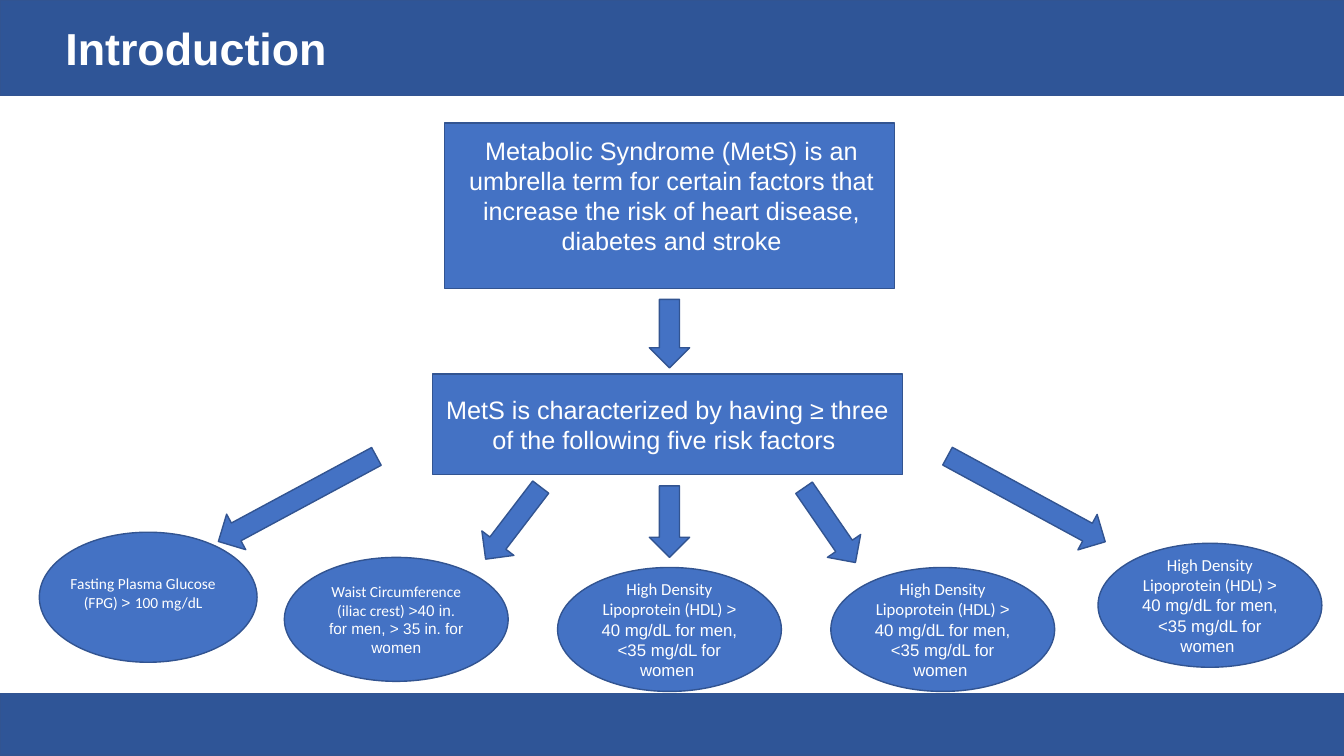
from pptx import Presentation
from pptx import util as u
from pptx.dml.color import RGBColor
from pptx.enum import shapes, text

BAND_BLUE = RGBColor(0x2F, 0x55, 0x97)
SHAPE_BLUE = RGBColor(0x44, 0x72, 0xC4)
OUTLINE_BLUE = RGBColor(0x32, 0x54, 0x91)
WHITE = RGBColor(0xFF, 0xFF, 0xFF)
SLIDE_WIDTH, SLIDE_HEIGHT = 13.33, 7.5

RECTANGLE = shapes.MSO_SHAPE.RECTANGLE
ELLIPSE = shapes.MSO_SHAPE.OVAL
DOWN_ARROW = shapes.MSO_SHAPE.DOWN_ARROW

HDL_RUNS = [("High Density Lipoprotein (HDL) ", "Calibri"),
            ("> 40 mg/dL for men, <35 mg/dL for women ", "Arial")]
WAIST_RUNS = [("Waist Circumference (iliac crest) ", "Calibri"),
              (">40 in. for men, > 35 in. for women", "Arial")]
GLUCOSE_RUNS = [("Fasting Plasma Glucose (FPG) ", "Calibri"),
                ("> ", "Arial"), ("100 mg/dL", "Calibri")]


def add_box(slide, kind, box, fill=SHAPE_BLUE, rotation=0):
    shape = slide.shapes.add_shape(kind, *map(u.Inches, box))
    shape.shadow.inherit = False
    shape.fill.solid()
    shape.fill.fore_color.rgb = fill
    shape.line.color.rgb = OUTLINE_BLUE
    shape.line.width = u.Pt(1)
    shape.rotation = rotation
    return shape


def write(shape, runs, size, anchor=text.MSO_ANCHOR.MIDDLE,
          align=text.PP_ALIGN.CENTER, bold=False):
    frame = shape.text_frame
    frame.word_wrap = True
    frame.vertical_anchor = anchor
    paragraph = frame.paragraphs[0]
    paragraph.alignment = align
    for words, font_name in runs:
        run = paragraph.add_run()
        run.text = words
        run.font.name = font_name
        run.font.size = u.Pt(size)
        run.font.bold = bold
        run.font.color.rgb = WHITE


def add_label(slide, box, runs, size, **options):
    label = slide.shapes.add_textbox(*map(u.Inches, box))
    write(label, runs, size, anchor=text.MSO_ANCHOR.TOP, **options)


def add_title_band(slide, left, top, width, height):
    add_box(slide, RECTANGLE, (left, top, width, height), BAND_BLUE)
    add_label(slide, (left + 0.55, top + 0.16, width - 0.75, 0.64),
              [("Introduction", "Arial")], 32,
              align=text.PP_ALIGN.LEFT, bold=True)


def add_footer_band(slide, left, top, width, height):
    add_box(slide, RECTANGLE, (left, top, width, height), BAND_BLUE)


def add_definition(slide, left, top, width, height):
    add_box(slide, RECTANGLE, (left, top, width, height))
    add_label(slide, (left + 0.11, top + 0.07, width - 0.18, 1.31),
              [("Metabolic Syndrome (MetS) is an umbrella term for certain "
                "factors that increase the risk of heart disease, diabetes "
                "and stroke", "Arial")], 18)


def add_criterion(slide, left, top, width, height):
    criterion = add_box(slide, RECTANGLE, (left, top, width, height))
    write(criterion, [("MetS is characterized by having ≥ three of the "
                       "following five risk factors ", "Arial")], 18)


def add_arrows(slide, left, top):
    # Offset from the corner, length and rotation of each arrow
    for dx, dy, length, rotation in [(3.69, 0, 0.68, 0),
                                     (0, 1.09, 1.78, 61.7),
                                     (2.14, 1.77, 0.9, 37.4),
                                     (3.69, 1.85, 0.71, 0),
                                     (5.28, 1.79, 0.9, 325.5),
                                     (7.23, 1.09, 1.78, 298.5)]:
        add_box(slide, DOWN_ARROW, (left + dx, top + dy, 0.4, length),
                rotation=rotation)


def add_risk_factors(slide, left, top):
    # Glucose has a separate label, set above the ellipse's middle
    add_box(slide, ELLIPSE, (left, top, 2.16, 1.29))
    add_label(slide, (left + 0.2, top + 0.37, 1.66, 0.47), GLUCOSE_RUNS, 11)

    # The other four carry their own text
    for dx, dy, runs, size in [(2.43, 0.25, WAIST_RUNS, 11),
                               (5.14, 0.35, HDL_RUNS, 12),
                               (7.85, 0.35, HDL_RUNS, 12),
                               (10.5, 0.11, HDL_RUNS, 12)]:
        factor = add_box(slide, ELLIPSE, (left + dx, top + dy, 2.22, 1.23))
        write(factor, runs, size)


def main():
    presentation = Presentation()
    presentation.slide_width = u.Inches(SLIDE_WIDTH)
    presentation.slide_height = u.Inches(SLIDE_HEIGHT)
    slide = presentation.slides.add_slide(presentation.slide_layouts[6])

    add_title_band(slide, 0, 0, SLIDE_WIDTH, 0.95)
    add_footer_band(slide, 0, 6.88, SLIDE_WIDTH, 0.61)
    add_definition(slide, 4.41, 1.22, 4.46, 1.64)
    add_criterion(slide, 4.29, 3.71, 4.66, 1)
    add_risk_factors(slide, 0.39, 5.28)
    add_arrows(slide, 2.75, 2.97)

    presentation.save("out.pptx")


if __name__ == "__main__":
    main()
